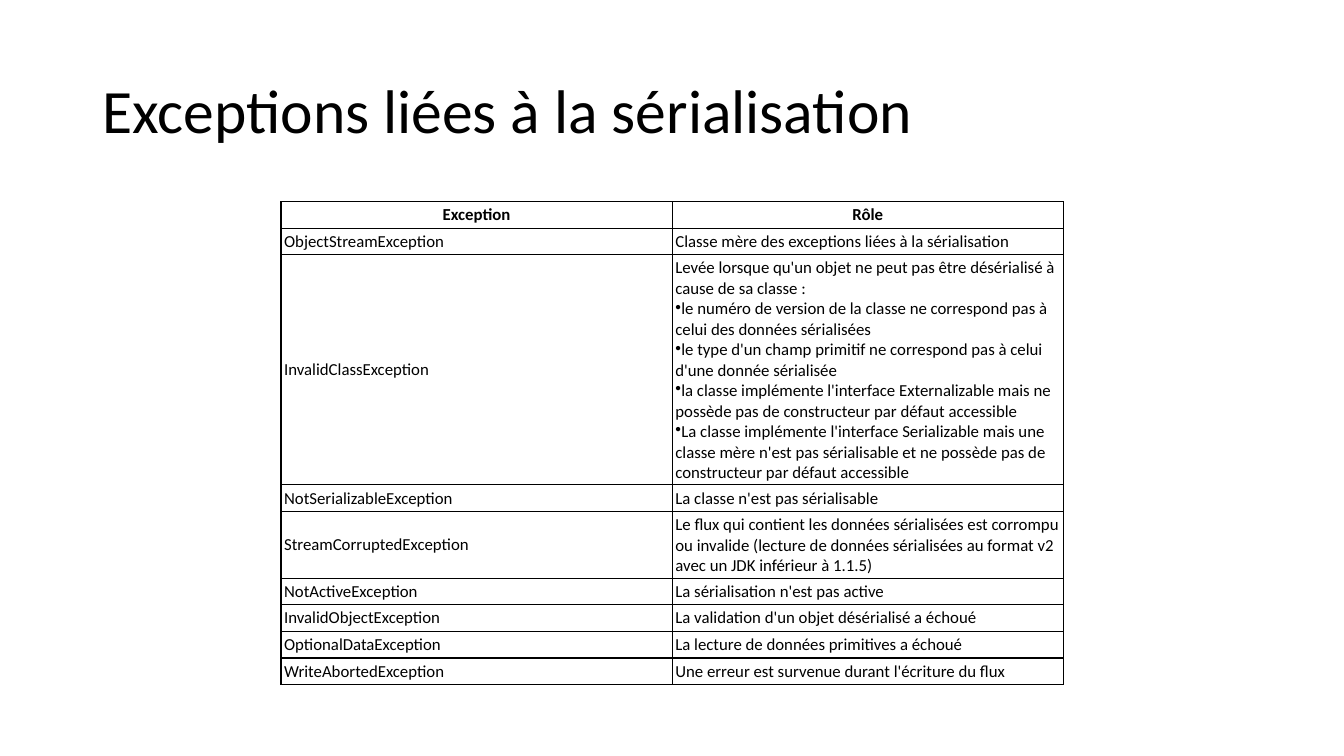
from dataclasses import dataclass

import pptx
import pptx.dml.color
import pptx.enum.text
import pptx.oxml
import pptx.oxml.ns
import pptx.util
from pptx.util import Cm

FONT = "Calibri"
BLACK = "000000"
WHITE = "FFFFFF"
CELL_MARGIN = Cm(0.08)
MIDDLE = pptx.enum.text.MSO_ANCHOR.MIDDLE
CENTER = pptx.enum.text.PP_ALIGN.CENTER
LEFT = pptx.enum.text.PP_ALIGN.LEFT


@dataclass(frozen=True)
class ExceptionRow:
    name: str
    role: str
    causes: tuple[str, ...] = ()
    height: float = 0.66
    heading: bool = False


ROWS = [
    ExceptionRow("Exception", "Rôle", heading=True),
    ExceptionRow("ObjectStreamException", "Classe mère des exceptions liées à la sérialisation"),
    ExceptionRow(
        "InvalidClassException",
        "Levée lorsque qu'un objet ne peut pas être désérialisé à cause de sa classe :",
        causes=(
            "le numéro de version de la classe ne correspond pas à celui des données sérialisées",
            "le type d'un champ primitif ne correspond pas à celui d'une donnée sérialisée",
            "la classe implémente l'interface Externalizable mais ne possède pas de "
            "constructeur par défaut accessible",
            "La classe implémente l'interface Serializable mais une classe mère n'est pas "
            "sérialisable et ne possède pas de constructeur par défaut accessible",
        ),
        height=5.8,
    ),
    ExceptionRow("NotSerializableException", "La classe n'est pas sérialisable"),
    ExceptionRow(
        "StreamCorruptedException",
        "Le flux qui contient les données sérialisées est corrompu ou invalide "
        "(lecture de données sérialisées au format v2 avec un JDK inférieur à 1.1.5)",
        height=1.68,
    ),
    ExceptionRow("NotActiveException", "La sérialisation n'est pas active"),
    ExceptionRow("InvalidObjectException", "La validation d'un objet désérialisé a échoué"),
    ExceptionRow("OptionalDataException", "La lecture de données primitives a échoué"),
    ExceptionRow("WriteAbortedException", "Une erreur est survenue durant l'écriture du flux"),
]


def color(value: str) -> pptx.dml.color.RGBColor:
    return pptx.dml.color.RGBColor.from_string(value)


def style_paragraph(paragraph, size: float, bold: bool = False) -> None:
    font = paragraph.font
    font.name = FONT
    font.size = pptx.util.Pt(size)
    font.bold = bold
    font.color.rgb = color(BLACK)


def add_bullet(paragraph) -> None:
    properties = paragraph._p.get_or_add_pPr()
    properties.set("marL", "0")
    properties.set("indent", "0")
    properties.append(pptx.oxml.parse_xml(
        f'<a:buChar {pptx.oxml.ns.nsdecls("a")} char="•"/>'))


def add_borders(cell) -> None:
    properties = cell._tc.get_or_add_tcPr()
    for position, side in enumerate(("lnL", "lnR", "lnT", "lnB")):
        properties.insert(position, pptx.oxml.parse_xml(
            f'<a:{side} {pptx.oxml.ns.nsdecls("a")} w="12700">'
            f'<a:solidFill><a:srgbClr val="{BLACK}"/></a:solidFill></a:{side}>'))


def fill_cell(cell, text: str, heading: bool, causes: tuple[str, ...] = ()) -> None:
    cell.margin_left = cell.margin_right = CELL_MARGIN
    cell.margin_top = cell.margin_bottom = CELL_MARGIN
    cell.vertical_anchor = MIDDLE
    cell.fill.solid()
    cell.fill.fore_color.rgb = color(WHITE)
    add_borders(cell)

    frame = cell.text_frame
    frame.text = "\n".join((text, *causes))
    for index, paragraph in enumerate(frame.paragraphs):
        paragraph.alignment = CENTER if heading else LEFT
        if index > 0:
            add_bullet(paragraph)
        style_paragraph(paragraph, 12, bold=heading)


def add_title(slide, text: str) -> None:
    frame = slide.shapes.add_textbox(Cm(2.33), Cm(1.01), Cm(29.21), Cm(3.68)).text_frame
    frame.word_wrap = True
    frame.vertical_anchor = MIDDLE
    frame.text = text
    heading = frame.paragraphs[0]
    heading.line_spacing = 0.9
    style_paragraph(heading, 44)


def add_exception_table(slide, rows: list[ExceptionRow]) -> None:
    table_height = Cm(sum(row.height for row in rows))
    exceptions = slide.shapes.add_table(
        len(rows), 2, Cm(7.08), Cm(5.08), Cm(19.72), table_height).table
    exceptions.first_row = False
    exceptions.horz_banding = False
    for index, row in enumerate(rows):
        exceptions.rows[index].height = Cm(row.height)
        fill_cell(exceptions.cell(index, 0), row.name, row.heading)
        fill_cell(exceptions.cell(index, 1), row.role, row.heading, row.causes)


def main() -> None:
    deck = pptx.Presentation()
    deck.slide_width, deck.slide_height = Cm(33.87), Cm(19.05)
    slide = deck.slides.add_slide(deck.slide_layouts[6])

    # Title
    add_title(slide, "Exceptions liées à la sérialisation")

    # Exceptions and their roles
    add_exception_table(slide, ROWS)

    deck.save("out.pptx")


if __name__ == "__main__":
    main()
